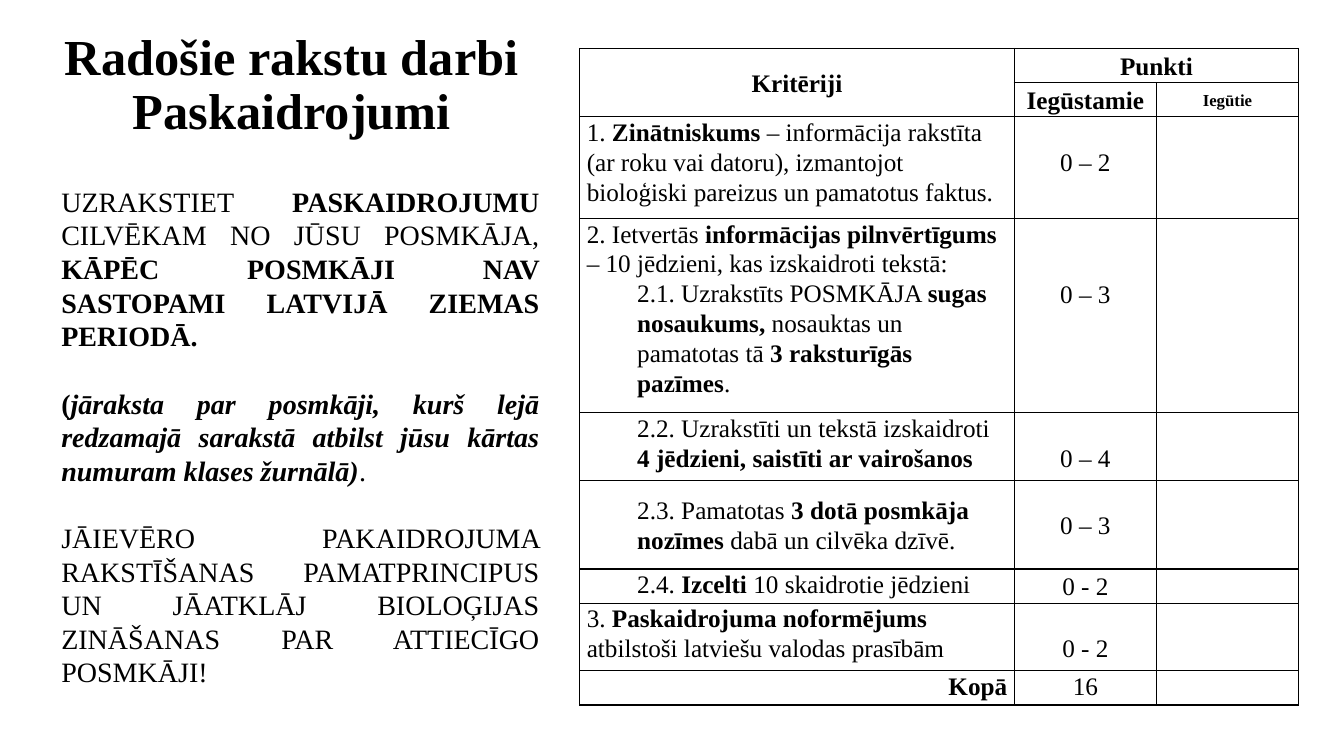
from lxml.etree import SubElement
from pptx import Presentation
from pptx.dml.color import RGBColor
from pptx.enum.text import MSO_ANCHOR as Anchor, PP_ALIGN as Align
from pptx.oxml import parse_xml
from pptx.oxml.ns import nsdecls, qn
from pptx.util import Emu, Pt

PX = 9144
COLORS = {"ink": "000000", "paper": "FFFFFF"}
FONT = "Times New Roman"
LINE = 30
INDENT = 50

TITLE = ["Radošie rakstu darbi", "Paskaidrojumi"]
TASK = [
    [("UZRAKSTIET ", ""), ("PASKAIDROJUMU ", "b"), ("CILVĒKAM NO JŪSU POSMKĀJA, ", ""),
     ("KĀPĒC POSMKĀJI NAV SASTOPAMI LATVIJĀ ZIEMAS PERIODĀ.", "b")],
    [("(", "b"),
     ("jāraksta par posmkāji, kurš lejā redzamajā sarakstā atbilst jūsu kārtas "
      "numuram klases žurnālā)", "bi"), (".", "")],
    [("JĀIEVĒRO PAKAIDROJUMA RAKSTĪŠANAS PAMATPRINCIPUS UN JĀATKLĀJ BIOLOĢIJAS "
      "ZINĀŠANAS PAR ATTIECĪGO POSMKĀJI!", "")],
]
COLUMNS = [431, 141, 141]
HEADER_HEIGHT = 34
HEADERS = [(0, 0, "Kritēriji", 18), (0, 1, "Punkti", 18),
           (1, 1, "Iegūstamie", 18), (1, 2, "Iegūtie", 12)]
CRITERIA = [
    (101, [(0, [("1. ", ""), ("Zinātniskums", "b"),
                (" – informācija rakstīta (ar roku vai datoru), izmantojot bioloģiski "
                 "pareizus un pamatotus faktus.", "")])], "0 – 2", 1),
    (178, [(0, [("2. Ietvertās ", ""), ("informācijas pilnvērtīgums", "b"),
                (" – 10 jēdzieni, kas izskaidroti tekstā:", "")]),
           (INDENT, [("2.1. Uzrakstīts POSMKĀJA ", ""), ("sugas nosaukums, ", "b"),
                     ("nosauktas un pamatotas tā", ""), (" 3 raksturīgās pazīmes", "b"),
                     (".", "")])], "0 – 3", 2),
    (67, [(INDENT, [("2.2. Uzrakstīti un tekstā izskaidroti ", ""),
                    ("4 jēdzieni, saistīti ar vairošanos", "b")])], "0 – 4", 1),
    (88, [(INDENT, [("2.3. Pamatotas ", ""), ("3 dotā posmkāja nozīmes", "b"),
                    (" dabā un cilvēka dzīvē.", "")])], "0 – 3", 1),
    (34, [(INDENT, [("2.4. ", ""), ("Izcelti", "b"), (" 10 skaidrotie jēdzieni", "")])],
     "0 - 2", 0),
    (67, [(0, [("3.", ""), (" Paskaidrojuma noformējums ", "b"),
               ("atbilstoši latviešu valodas prasībām", "")])], "0 - 2", 1),
    (34, [(0, [("Kopā", "b")])], "16", 0),
]


def px(length):
    return Emu(length * PX)


def add_run(paragraph, text, style, size):
    run = paragraph.add_run()
    run.text = text
    font = run.font
    font.name, font.size = FONT, Pt(size)
    font.bold, font.italic = "b" in style, "i" in style
    font.color.rgb = RGBColor.from_string(COLORS["ink"])


def add_text_frame(slide, box):
    frame = slide.shapes.add_textbox(*map(px, box)).text_frame
    frame.word_wrap = True
    return frame


def add_title(slide, box):
    frame = add_text_frame(slide, box)
    frame.vertical_anchor = Anchor.MIDDLE
    paragraph = frame.paragraphs[0]
    paragraph.alignment, paragraph.line_spacing = Align.CENTER, 0.9
    for index, line in enumerate(TITLE):
        if index:
            paragraph.add_line_break()
        add_run(paragraph, line, "b", 36)


def add_task(slide, box):
    frame = add_text_frame(slide, box)
    for index, runs in enumerate(TASK):
        paragraph = frame.add_paragraph() if index else frame.paragraphs[0]
        paragraph.alignment = Align.JUSTIFY
        if index:
            paragraph.space_before = Pt(24)
        for text, style in runs:
            add_run(paragraph, text, style, 20)


def format_cell(cell):
    cell.margin_left = cell.margin_right = px(7)
    cell.margin_top = cell.margin_bottom = 0
    cell.fill.background()
    properties = cell._tc.get_or_add_tcPr()
    for index, side in enumerate(("lnL", "lnR", "lnT", "lnB")):
        border = parse_xml(f'<a:{side} {nsdecls("a")} w="12700"/>')
        fill = SubElement(border, qn("a:solidFill"))
        SubElement(fill, qn("a:srgbClr"), val=COLORS["ink"])
        properties.insert(index, border)


def fill_cell(cell, paragraphs, align, anchor=Anchor.TOP, size=18):
    cell.vertical_anchor = anchor
    frame = cell.text_frame
    for index, (indent, runs) in enumerate(paragraphs):
        paragraph = frame.add_paragraph() if index else frame.paragraphs[0]
        paragraph.alignment, paragraph.line_spacing = align, 1.07
        if indent:
            paragraph._p.get_or_add_pPr().set("marL", str(px(indent)))
        for text, style in runs:
            add_run(paragraph, text, style, size)


def add_criteria_table(slide, left, top):
    heights = [HEADER_HEIGHT] * 2 + [row[0] for row in CRITERIA]
    box = left, top, sum(COLUMNS), sum(heights)
    table = slide.shapes.add_table(len(heights), len(COLUMNS), *map(px, box)).table
    table.first_row = table.horz_banding = False
    for column, width in zip(table.columns, COLUMNS):
        column.width = px(width)
    for row, height in zip(table.rows, heights):
        row.height = px(height)
    for cell in table.iter_cells():
        format_cell(cell)
        cell.text_frame.paragraphs[0].font.size = Pt(18)
    table.cell(0, 0).merge(table.cell(1, 0))
    table.cell(0, 1).merge(table.cell(0, 2))
    for row, column, text, size in HEADERS:
        fill_cell(table.cell(row, column), [(0, [(text, "b")])], Align.CENTER,
                  Anchor.MIDDLE, size)
    last = len(heights) - 1
    for row, (height, criterion, points, lines_above) in enumerate(CRITERIA, 2):
        fill_cell(table.cell(row, 0), criterion, Align.RIGHT if row == last else Align.LEFT,
                  Anchor.MIDDLE if height == 88 else Anchor.TOP)
        score = table.cell(row, 1)
        score.margin_top = px(LINE * lines_above)
        fill_cell(score, [(0, [(points, "")])], Align.CENTER,
                  Anchor.TOP if lines_above or row == last else Anchor.MIDDLE)


def build_slide(presentation):
    slide = presentation.slides.add_slide(presentation.slide_layouts[6])
    background = slide.background.fill
    background.solid()
    background.fore_color.rgb = RGBColor.from_string(COLORS["paper"])
    add_title(slide, (51, 13, 477, 145))
    add_criteria_table(slide, 575, 48)
    add_task(slide, (51, 178, 494, 533))


def main():
    """Build the slide with the writing task and its marking criteria."""
    presentation = Presentation()
    presentation.slide_width, presentation.slide_height = px(1333), px(750)
    build_slide(presentation)
    presentation.save("out.pptx")


if __name__ == "__main__":
    main()
